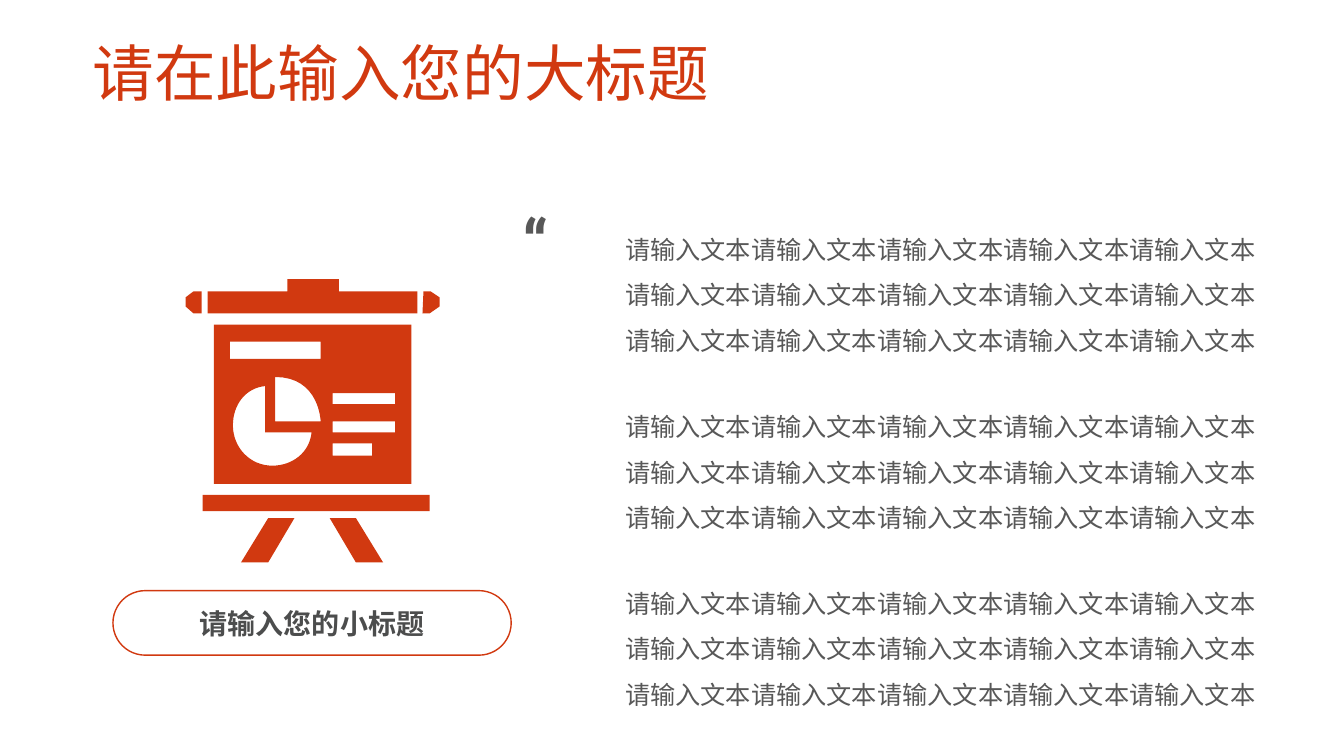
from lxml import etree
from pptx import Presentation
from pptx.dml.color import RGBColor
from pptx.enum import shapes, text
from pptx.oxml.ns import qn
from pptx.util import Inches, Pt

COLORS = {"accent": "D13910", "body": "585858", "label": "4C4D4D", "white": "FFFFFF"}
CJK = "Noto Sans CJK SC"


def rgb(name):
    return RGBColor.from_string(COLORS[name])


def box(left, top, width, height):
    return [Inches(v) for v in (left, top, width, height)]


def write(shape, content, size, color, font=CJK, bold=None, align=None,
          anchor=text.MSO_ANCHOR.MIDDLE, spacing=None):
    """Put one formatted run in the shape, with the font set for Latin and East Asian text."""
    tf = shape.text_frame
    tf.word_wrap = True
    tf.vertical_anchor = anchor
    p = tf.paragraphs[0]
    p.alignment = align
    p.line_spacing = spacing
    r = p.add_run()
    r.text = content
    r.font.size = Pt(size)
    r.font.bold = bold
    r.font.color.rgb = rgb(color)
    r.font.name = font
    ea = etree.Element(qn("a:ea"), typeface=font)
    r.font._element.find(qn("a:latin")).addnext(ea)
    return tf


def add_title(s, content):
    title = s.shapes.title
    title.left, title.top, title.width, title.height = box(0.82, 0.12, 11.68, 1.02)
    tf = write(title, content, 44, "accent", align=text.PP_ALIGN.LEFT,
               anchor=text.MSO_ANCHOR.BOTTOM, spacing=0.9)
    tf.auto_size = text.MSO_AUTO_SIZE.NONE


def rect(left, top, right, bottom):
    return [(left, top), (right, top), (right, bottom), (left, bottom)]


def curve(p0, p1, p2, p3, steps=16):
    """Points along a cubic Bezier curve."""
    points = []
    for i in range(steps + 1):
        t = i / steps
        weights = ((1 - t) ** 3, 3 * t * (1 - t) ** 2, 3 * t ** 2 * (1 - t), t ** 3)
        points.append(tuple(sum(w * p[axis] for w, p in zip(weights, (p0, p1, p2, p3)))
                            for axis in (0, 1)))
    return points


def board_contours():
    """Outlines of the flip-chart icon; those inside the sheet are cut out of it."""
    rail = [(2.06, 2.89), (2.85, 2.89), (2.85, 2.77), (3.36, 2.77),
            (3.36, 2.89), (4.14, 2.89), (4.14, 3.11), (2.06, 3.11)]
    left_cap = [(1.84, 3.04), (1.84, 2.95), (1.92, 2.89), (2, 2.89), (2, 3.11), (1.92, 3.11)]
    right_cap = [(4.26, 3.11), (4.19, 3.11), (4.2, 2.89), (4.27, 2.89), (4.36, 2.95), (4.36, 3.04)]
    sheet = rect(2.12, 3.22, 4.08, 4.8)
    heading = rect(2.28, 3.39, 3.18, 3.56)
    lines = [rect(3.3, 3.9, 3.92, 4.01), rect(3.3, 4.18, 3.92, 4.29), rect(3.3, 4.4, 3.69, 4.52)]
    pie = (curve((2.7, 4.62), (2.9, 4.62), (3.07, 4.49), (3.09, 4.29))
           + [(2.63, 4.29)]
           + curve((2.63, 3.83), (2.43, 3.85), (2.31, 4.02), (2.31, 4.22))
           + curve((2.31, 4.22), (2.31, 4.44), (2.48, 4.62), (2.7, 4.62)))
    slice_ = curve((3.18, 4.18), (3.18, 4.18), (3.17, 3.74), (2.73, 3.74)) + [(2.73, 4.18)]
    tray = rect(2.01, 4.91, 4.26, 5.07)
    left_leg = [(2.92, 5.14), (2.66, 5.58), (2.39, 5.58), (2.66, 5.14)]
    right_leg = [(3.8, 5.58), (3.53, 5.58), (3.27, 5.14), (3.53, 5.14)]
    return [right_cap, rail, left_cap, sheet, *lines, pie, slice_, heading,
            tray, left_leg, right_leg]


def add_board(s):
    contours = [[(Inches(x), Inches(y)) for x, y in c] for c in board_contours()]
    builder = s.shapes.build_freeform(*contours[0][0])
    builder.add_line_segments(contours[0][1:], close=True)
    for contour in contours[1:]:
        builder.move_to(*contour[0])
        builder.add_line_segments(contour[1:], close=True)
    sp = builder.convert_to_shape()
    sp.shadow.inherit = False
    sp.fill.solid()
    sp.fill.fore_color.rgb = rgb("accent")
    sp.line.fill.background()


def add_label(s, content):
    sp = s.shapes.add_shape(shapes.MSO_SHAPE.ROUNDED_RECTANGLE, *box(1.12, 5.86, 3.95, 0.64))
    sp.adjustments[0] = 0.5
    sp.shadow.inherit = False
    sp.fill.solid()
    sp.fill.fore_color.rgb = rgb("white")
    sp.line.color.rgb = rgb("accent")
    sp.line.width = Pt(1)
    write(sp, content, 20, "label", bold=True, align=text.PP_ALIGN.CENTER)


def add_quote_mark(s):
    sp = s.shapes.add_textbox(*box(5.08, 1.95, 0.7, 0.91))
    tf = write(sp, "“", 48, "body", font="Roboto Condensed", bold=True,
               anchor=text.MSO_ANCHOR.TOP)
    tf.auto_size = text.MSO_AUTO_SIZE.SHAPE_TO_FIT_TEXT


def add_body(s, top, content):
    sp = s.shapes.add_textbox(*box(6, top, 6.65, 1.48))
    write(sp, content, 18, "body", align=text.PP_ALIGN.CENTER, spacing=1.5)


def main():
    prs = Presentation()
    prs.slide_width, prs.slide_height = Inches(13.33), Inches(7.5)
    s = prs.slides.add_slide(prs.slide_layouts[5])
    add_title(s, "请在此输入您的大标题")
    add_board(s)
    add_label(s, "请输入您的小标题")
    add_quote_mark(s)
    for top in (2.11, 3.87, 5.62):
        add_body(s, top, "请输入文本" * 15)
    prs.save("out.pptx")


if __name__ == "__main__":
    main()
